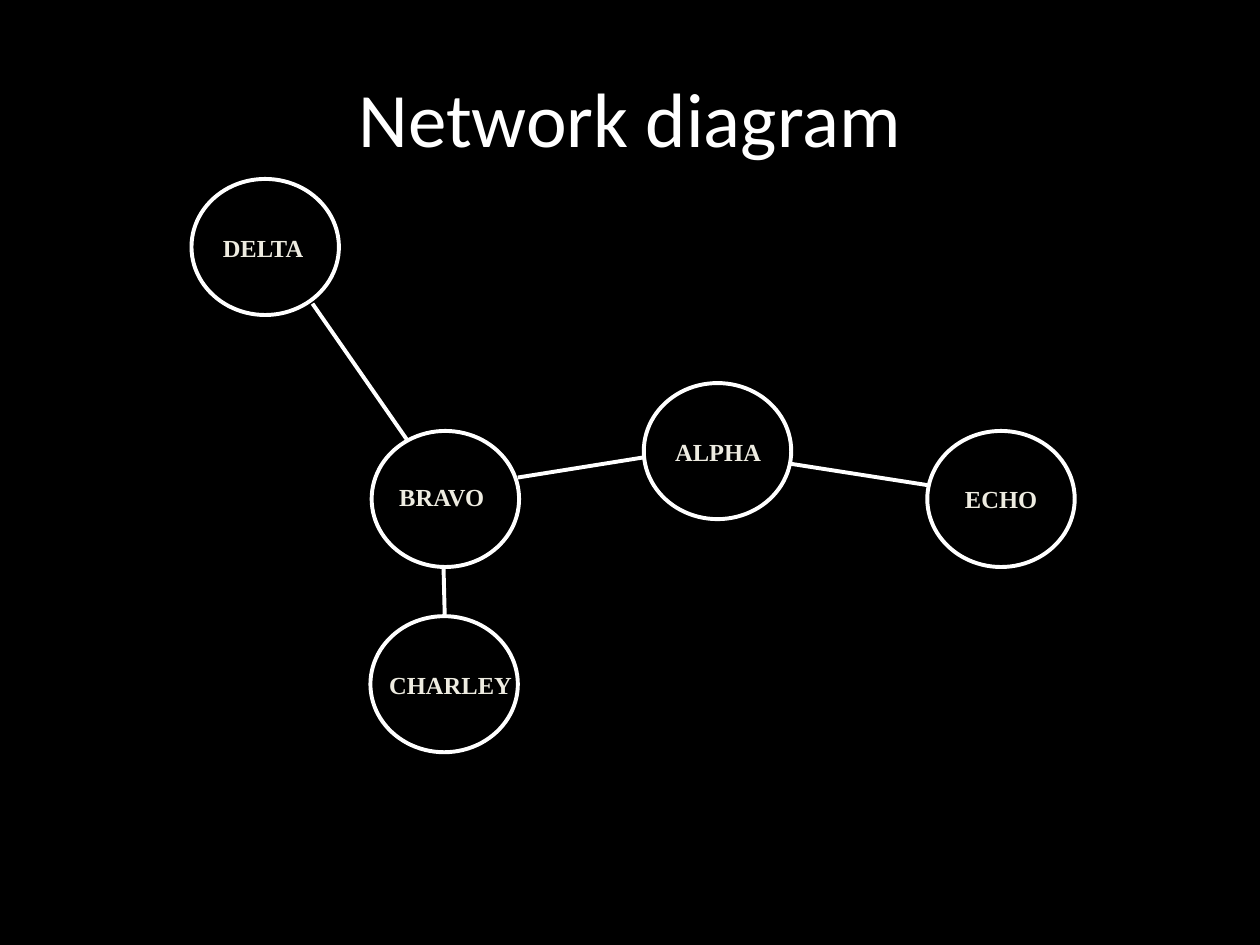
import pptx
import pptx.util
from pptx.dml.color import RGBColor
from pptx.enum.shapes import MSO_CONNECTOR, MSO_SHAPE
from pptx.enum.text import MSO_ANCHOR, MSO_AUTO_SIZE, PP_ALIGN
from pptx.oxml.ns import qn
from pptx.util import Inches
from lxml import etree

BLACK = RGBColor(0x00, 0x00, 0x00)
WHITE = RGBColor(0xFF, 0xFF, 0xFF)
CREAM = RGBColor(0xEE, 0xEC, 0xE1)

NODE_W, NODE_H = 1.17, 1.08
LABEL_H = 0.33

# name: (node left, node top, label left, label top, label width)
NODES = {
    "ALPHA": (5.11, 3.04, 5.26, 3.42, 0.88),
    "BRAVO": (2.95, 3.42, 3.07, 3.78, 0.9),
    "CHARLEY": (2.94, 4.89, 2.99, 5.27, 1.18),
    "DELTA": (1.52, 1.42, 1.67, 1.8, 0.87),
    "ECHO": (7.36, 3.42, 7.56, 3.79, 0.78),
}

LINKS = [
    (2.48, 2.41, 3.23, 3.49),  # Delta - Bravo
    (3.52, 4.49, 3.53, 4.9),   # Bravo - Charley
    (4.11, 3.79, 5.11, 3.63),  # Bravo - Alpha
    (6.27, 3.68, 7.36, 3.85),  # Alpha - Echo
]


def write(tf, text, font, size, color, bold=False, align=PP_ALIGN.LEFT):
    p = tf.paragraphs[0]
    p.alignment = align
    r = p.add_run()
    r.text = text
    r.font.name = font
    r.font.size = pptx.util.Pt(size)
    r.font.bold = bold
    r.font.color.rgb = color


class Diagram:
    """Holds the line style and the slide being drawn."""

    def __init__(self, s, color=WHITE, width=2.25):
        self.s = s
        self.color = color
        self.width = pptx.util.Pt(width)
        s.background.fill.solid()
        s.background.fill.fore_color.rgb = BLACK

    def stroke(self, line):
        line.color.rgb = self.color
        line.width = self.width

    def title(self, text, box):
        tf = self.s.shapes.add_textbox(*map(Inches, box)).text_frame
        tf.word_wrap = True
        tf.vertical_anchor = MSO_ANCHOR.MIDDLE
        write(tf, text, "Calibri", 44, self.color, align=PP_ALIGN.CENTER)

    def node(self, left, top):
        sp = self.s.shapes.add_shape(
            MSO_SHAPE.OVAL, *map(Inches, (left, top, NODE_W, NODE_H)))
        sp.shadow.inherit = False
        sp.fill.background()
        self.stroke(sp.line)

    def label(self, text, left, top, width):
        box = map(Inches, (left, top, width, LABEL_H))
        tf = self.s.shapes.add_textbox(*box).text_frame
        tf.word_wrap = False
        tf.auto_size = MSO_AUTO_SIZE.SHAPE_TO_FIT_TEXT
        write(tf, text, "Times New Roman", 14, CREAM, bold=True)

    def link(self, ends):
        cxn = self.s.shapes.add_connector(
            MSO_CONNECTOR.STRAIGHT, *map(Inches, ends))
        self.stroke(cxn.line)
        etree.SubElement(cxn._element.spPr, qn("a:effectLst"))


def main():
    prs = pptx.Presentation()
    prs.slide_width, prs.slide_height = Inches(10), Inches(7.5)
    diagram = Diagram(prs.slides.add_slide(prs.slide_layouts[6]))
    for name, (left, top, *label_box) in NODES.items():
        diagram.node(left, top)
        diagram.label(name, *label_box)
    for ends in LINKS:
        diagram.link(ends)
    diagram.title("Network diagram", (0.5, 0.3, 9, 1.25))
    prs.save("out.pptx")


if __name__ == "__main__":
    main()
